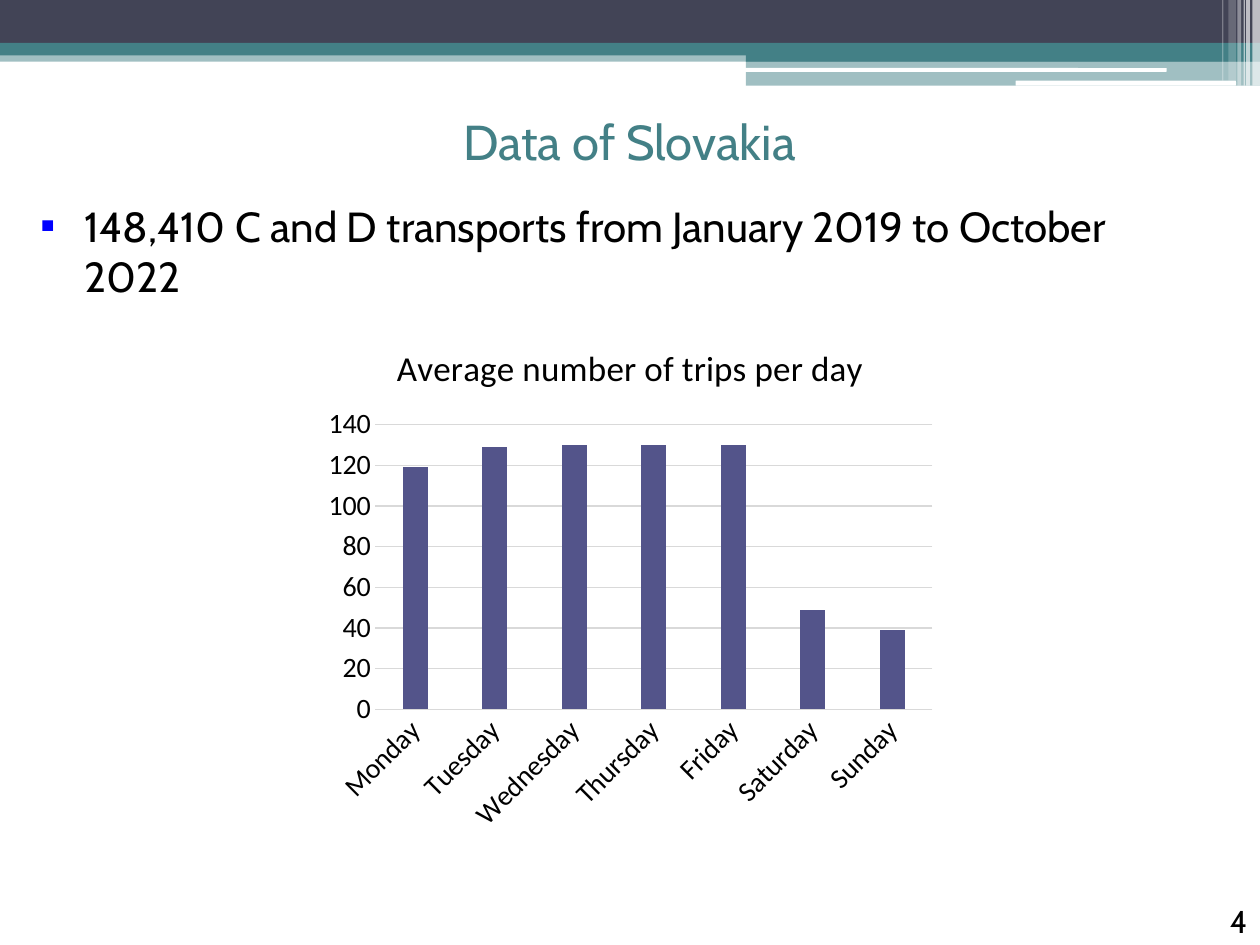
from dataclasses import dataclass

from lxml import etree
from pptx import Presentation
from pptx.chart.data import CategoryChartData
from pptx.dml.color import RGBColor
from pptx.enum.chart import XL_CHART_TYPE, XL_TICK_MARK
from pptx.enum.shapes import MSO_SHAPE
from pptx.enum.text import MSO_ANCHOR, PP_ALIGN
from pptx.oxml import parse_xml
from pptx.oxml.ns import nsdecls, qn
from pptx.util import Inches, Pt

RECT = MSO_SHAPE.RECTANGLE
ROUNDED = MSO_SHAPE.ROUNDED_RECTANGLE
COLUMNS = XL_CHART_TYPE.COLUMN_CLUSTERED
NO_TICKS = XL_TICK_MARK.NONE
LEFT, CENTER, RIGHT = PP_ALIGN.LEFT, PP_ALIGN.CENTER, PP_ALIGN.RIGHT
TOP, MIDDLE = MSO_ANCHOR.TOP, MSO_ANCHOR.MIDDLE
CHART_WIDTH, CHART_HEIGHT = 5, 4.11


@dataclass(frozen=True)
class Theme:
    teal: str = "438086"
    slate: str = "424456"
    white: str = "FFFFFF"
    black: str = "000000"
    bullet: str = "0000FF"
    column: str = "53548A"
    grid: str = "D9D9D9"
    text_font: str = "Cabin"
    chart_font: str = "Calibri"
    bullet_font: str = "Calibri"
    title_size: int = 28
    body_size: int = 24
    number_size: int = 18
    chart_title_size: int = 20
    axis_size: int = 16


@dataclass(frozen=True)
class Band:
    left: float
    top: float
    width: float
    height: float
    color: str
    opacity: int = 100
    preset: int = RECT


THEME = Theme()
BANDS = [
    Band(0, 0.4, 10, 0.09, THEME.teal, 50),
    Band(0, 0, 10, 0.34, THEME.slate),
    Band(0, 0.34, 10, 0.1, THEME.teal),
    Band(5.92, 0.39, 4.08, 0.1, THEME.teal),
    Band(5.92, 0.48, 4.08, 0.2, THEME.teal, 50),
    Band(5.91, 0.54, 3.35, 0.03, THEME.white, preset=ROUNDED),
    Band(8.06, 0.64, 1.75, 0.04, THEME.white, preset=ROUNDED),
    Band(9.94, 0, 0.06, 0.68, THEME.white, 65),
    Band(9.89, 0, 0.03, 0.68, THEME.white, 65),
    Band(9.87, 0, 0.01, 0.68, THEME.white, 60),
    Band(9.82, 0, 0.03, 0.68, THEME.white, 40),
    Band(9.75, 0, 0.06, 0.64, THEME.white, 20),
    Band(9.7, 0, 0.01, 0.64, THEME.white, 30),
]
TRIPS = {"Monday": 119, "Tuesday": 129, "Wednesday": 130, "Thursday": 130,
         "Friday": 130, "Saturday": 49, "Sunday": 39}


def rgb(color: str) -> RGBColor:
    return RGBColor.from_string(color)


def style_font(font, family: str, size: int, color: str) -> None:
    font.name, font.size, font.bold = family, Pt(size), False
    font.color.rgb = rgb(color)


def draw_band(slide, band: Band) -> None:
    shape = slide.shapes.add_shape(band.preset, Inches(band.left), Inches(band.top),
                                   Inches(band.width), Inches(band.height))
    shape.shadow.inherit = False
    shape.line.fill.background()
    shape.fill.solid()
    shape.fill.fore_color.rgb = rgb(band.color)
    if band.opacity < 100:
        color = shape.fill._xPr.find(".//" + qn("a:srgbClr"))
        etree.SubElement(color, qn("a:alpha"), val=str(band.opacity * 1000))


def add_text(slide, text: str, left: float, top: float, width: float, height: float, *,
             size: int, color: str = THEME.black, align: int = LEFT, anchor: int = TOP,
             before: int = 0, padded: bool = True, bullet: str = "") -> None:
    box = slide.shapes.add_textbox(Inches(left), Inches(top), Inches(width), Inches(height))
    frame = box.text_frame
    frame.word_wrap, frame.vertical_anchor = True, anchor
    if not padded:
        frame.margin_left = frame.margin_right = frame.margin_top = frame.margin_bottom = 0
    paragraph = frame.paragraphs[0]
    paragraph.alignment, paragraph.space_before = align, Pt(before)
    run = paragraph.add_run()
    run.text = text
    style_font(run.font, THEME.text_font, size, color)
    if bullet:
        properties = paragraph._p.get_or_add_pPr()
        properties.set("marL", str(Inches(0.47)))
        properties.set("indent", str(Inches(-0.35)))
        bullet_color = etree.SubElement(properties, qn("a:buClr"))
        etree.SubElement(bullet_color, qn("a:srgbClr"), val=THEME.bullet)
        etree.SubElement(properties, qn("a:buFont"), typeface=THEME.bullet_font)
        etree.SubElement(properties, qn("a:buChar"), char=bullet)


def manual_layout(**inches: float):
    """Build a chart layout from inches within the chart area."""
    inner = '<c:layoutTarget val="inner"/>' if "w" in inches else ""
    modes = "".join(f'<c:{key}Mode val="edge"/>' for key in inches if key in "xy")
    values = "".join(
        f'<c:{key} val="{value / (CHART_WIDTH if key in "xw" else CHART_HEIGHT)}"/>'
        for key, value in inches.items())
    return parse_xml(f'<c:layout {nsdecls("c")}><c:manualLayout>{inner}{modes}{values}'
                     '</c:manualLayout></c:layout>')


def place(element, layout, index: int) -> None:
    for old in element.findall(qn("c:layout")):
        element.remove(old)
    element.insert(index, layout)


def style_axis(axis) -> None:
    axis.major_tick_mark = axis.minor_tick_mark = NO_TICKS
    style_font(axis.tick_labels.font, THEME.chart_font, THEME.axis_size, THEME.black)


def style_line(line) -> None:
    line.color.rgb, line.width = rgb(THEME.grid), Pt(0.75)


def add_trip_chart(slide) -> None:
    data = CategoryChartData(number_format="0")
    data.categories = list(TRIPS)
    data.add_series("Series 1", list(TRIPS.values()))
    chart = slide.shapes.add_chart(COLUMNS, Inches(2.5), Inches(2.57),
                                   Inches(CHART_WIDTH), Inches(CHART_HEIGHT), data).chart
    style_font(chart.font, THEME.chart_font, THEME.axis_size, THEME.black)
    chart.has_legend = False
    chart.has_title = True
    title = chart.chart_title
    title.text_frame.text = "Average number of trips per day"
    style_font(title.text_frame.paragraphs[0].runs[0].font, THEME.chart_font,
               THEME.chart_title_size, THEME.black)
    place(title._element, manual_layout(x=0.6, y=0.1), 1)
    place(chart._chartSpace.chart.plotArea,
          manual_layout(x=0.48, y=0.8, w=4.42, h=2.26), 0)

    plot = chart.plots[0]
    plot.gap_width, plot.overlap, plot.vary_by_categories = 219, -27, False
    fill = plot.series[0].format.fill
    fill.solid()
    fill.fore_color.rgb = rgb(THEME.column)

    days, trips = chart.category_axis, chart.value_axis
    style_axis(days)
    style_axis(trips)
    style_line(days.format.line)
    days._element.find(f"{qn('c:txPr')}/{qn('a:bodyPr')}").set("rot", "-2700000")
    trips.format.line.fill.background()
    trips.has_major_gridlines = True
    style_line(trips.major_gridlines.format.line)
    trips.minimum_scale, trips.maximum_scale, trips.major_unit = 0, 140, 20
    trips.tick_labels.number_format = "0"
    trips.tick_labels.number_format_is_linked = False


def main() -> None:
    deck = Presentation()
    deck.slide_width, deck.slide_height = Inches(10), Inches(7.5)
    slide = deck.slides.add_slide(deck.slide_layouts[6])
    for band in BANDS:
        draw_band(slide, band)
    add_text(slide, "Data of Slovakia", 0.31, 0.83, 9.37, 0.57, size=THEME.title_size,
             color=THEME.teal, align=CENTER, anchor=MIDDLE, before=6)
    add_text(slide, "4", 9.33, 7.11, 0.67, 0.4, size=THEME.number_size, align=RIGHT)
    add_text(slide, "148,410 C and D transports from January 2019 to October 2022",
             0.2, 1.59, 9.29, 0.81, size=THEME.body_size, padded=False, bullet="▪")
    add_trip_chart(slide)
    deck.save("out.pptx")


if __name__ == "__main__":
    main()
